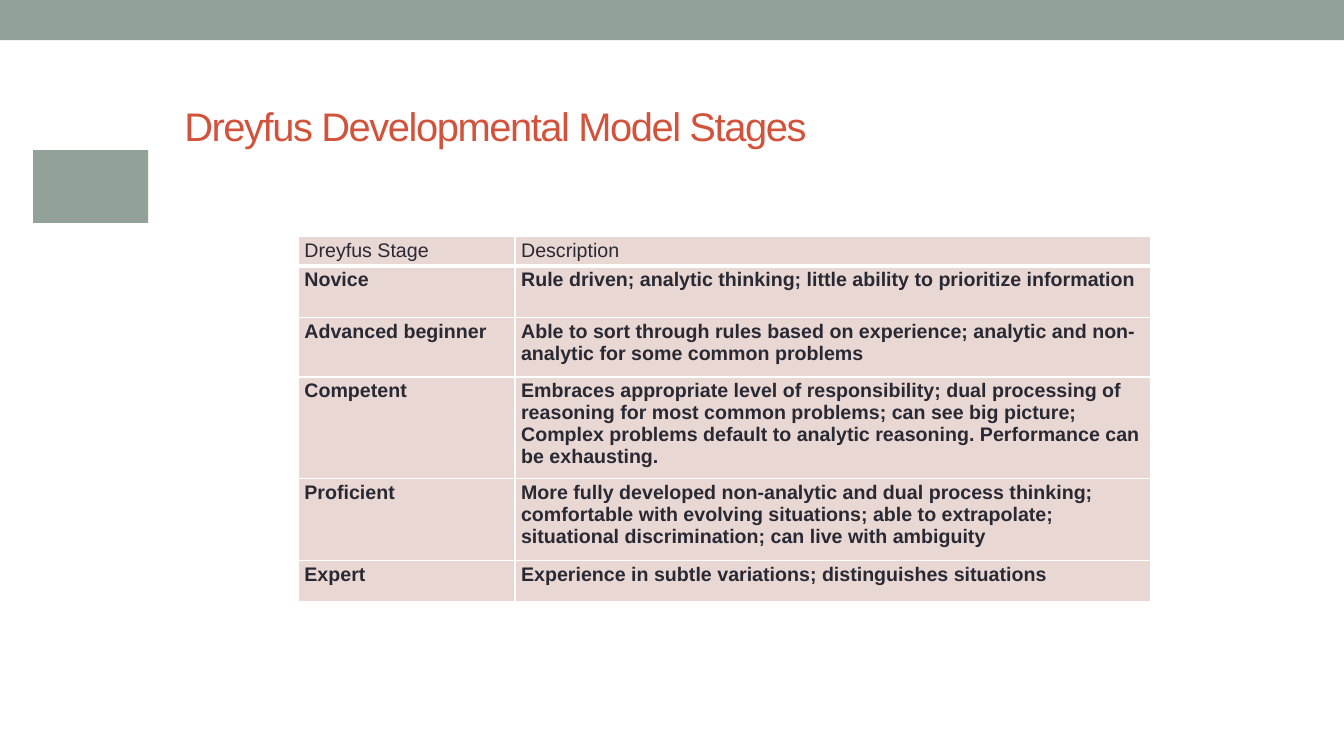
from typing import NamedTuple

from lxml import etree
from pptx import Presentation
from pptx.dml.color import RGBColor
from pptx.enum.shapes import MSO_SHAPE
from pptx.enum.text import MSO_ANCHOR
from pptx.oxml.ns import qn
from pptx.util import Pt

RECT = MSO_SHAPE.RECTANGLE
MIDDLE = MSO_ANCHOR.MIDDLE
FONT = "Arial"
COLORS = {"sage": "93A299", "rust": "D2533C", "ink": "292934",
          "blush": "E9D7D3", "white": "FFFFFF"}


class Box(NamedTuple):
    left: float
    top: float
    width: float
    height: float


class Stage(NamedTuple):
    height: float
    name: str
    text: str
    bold: bool = True


BLOCKS = [Box(0, 0, 960, 28.8), Box(23.76, 107.28, 82.08, 51.84)]
TITLE = Box(124.56, 20.88, 812.88, 137.52)
GRID = Box(213.12, 169.2, 609.12, 260.64)
WIDTHS = [154.8, 454.32]
STAGES = [
    Stage(20.88, "Dreyfus Stage", "Description", False),
    Stage(36.72, "Novice", "Rule driven; analytic thinking; little ability to "
          "prioritize information"),
    Stage(42.48, "Advanced beginner", "Able to sort through rules based on "
          "experience; analytic and non-analytic for some common problems"),
    Stage(72.72, "Competent", "Embraces appropriate level of responsibility; "
          "dual processing of reasoning for most common problems; can see big "
          "picture; Complex problems default to analytic reasoning. "
          "Performance can be exhausting."),
    Stage(58.32, "Proficient", "More fully developed non-analytic and dual "
          "process thinking; comfortable with evolving situations; able to "
          "extrapolate; situational discrimination; can live with ambiguity"),
    Stage(29.52, "Expert", "Experience in subtle variations; distinguishes "
          "situations"),
]


def place(box: Box) -> list:
    return [Pt(side) for side in box]


def paint(fill, color: str) -> None:
    fill.solid()
    fill.fore_color.rgb = RGBColor.from_string(COLORS[color])


def add_run(frame, text: str, size: float, color: str, bold: bool = False):
    run = frame.paragraphs[0].add_run()
    run.text = text
    run.font.name = FONT
    run.font.size = Pt(size)
    run.font.bold = bold
    run.font.color.rgb = RGBColor.from_string(COLORS[color])
    return run


def add_block(slide, box: Box) -> None:
    shape = slide.shapes.add_shape(RECT, *place(box))
    shape.shadow.inherit = False
    paint(shape.fill, "sage")
    shape.line.fill.background()


def add_title(slide) -> None:
    shape = slide.shapes.add_textbox(*place(TITLE))
    frame = shape.text_frame
    frame.word_wrap = True
    frame.vertical_anchor = MIDDLE
    run = add_run(frame, "Dreyfus Developmental Model Stages", 28.5, "rust")
    run.font._element.set("spc", "-100")


def set_edges(cell, base: float) -> None:
    """Draw white cell borders, with the bottom one of its own weight."""
    props = cell._tc.get_or_add_tcPr()
    edges = {"lnL": 1, "lnR": 1, "lnT": 1, "lnB": base}
    for index, (tag, width) in enumerate(edges.items()):
        line = etree.Element(qn(f"a:{tag}"), w=str(Pt(width)))
        fill = etree.SubElement(line, qn("a:solidFill"))
        etree.SubElement(fill, qn("a:srgbClr"), val=COLORS["white"])
        props.insert(index, line)


def fill_cell(cell, text: str, bold: bool) -> None:
    cell.margin_left = cell.margin_right = Pt(4.32)
    cell.margin_top = cell.margin_bottom = Pt(2.16)
    paint(cell.fill, "blush")
    set_edges(cell, 1 if bold else 3)
    add_run(cell.text_frame, text, 14, "ink", bold)


def add_grid(slide) -> None:
    frame = slide.shapes.add_table(len(STAGES), len(WIDTHS), *place(GRID))
    table = frame.table
    table.horz_banding = False
    for column, width in zip(table.columns, WIDTHS):
        column.width = Pt(width)
    for row, stage in zip(table.rows, STAGES):
        row.height = Pt(stage.height)
        for cell, text in zip(row.cells, (stage.name, stage.text)):
            fill_cell(cell, text, stage.bold)


def main() -> None:
    deck = Presentation()
    deck.slide_width, deck.slide_height = Pt(960), Pt(540)
    slide = deck.slides.add_slide(deck.slide_layouts[6])
    paint(slide.background.fill, "white")
    for box in BLOCKS:
        add_block(slide, box)
    add_grid(slide)
    add_title(slide)
    deck.save("out.pptx")


if __name__ == "__main__":
    main()
